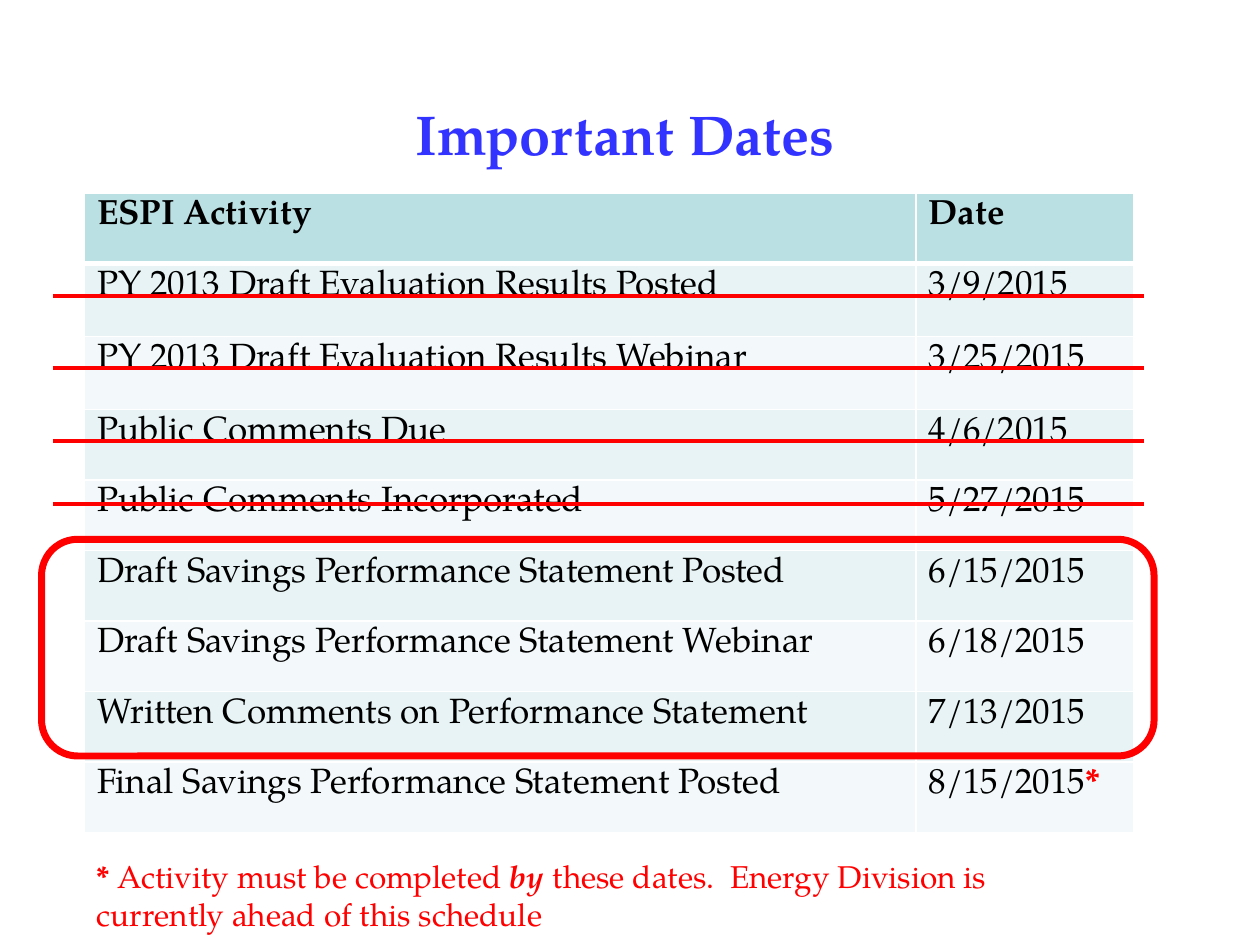
import pptx
import pptx.dml.color
import pptx.enum.shapes
import pptx.enum.text
import pptx.oxml
import pptx.oxml.ns
import pptx.util
from pptx.util import Inches

FONT = "TeX Gyre Pagella"
RED = "FF0000"
BLUE = "3333FF"
BLACK = "000000"
HEADER_FILL = "BBE0E3"
BAND_FILLS = ("E7F3F4", "F3F9FA")

COLUMN_WIDTHS = (6.6, 1.73)
ROW_HEIGHTS = (0.56, 0.58, 0.58) + (0.56,) * 6
ACTIVITIES = (
    ("ESPI Activity", "Date"),
    ("PY 2013 Draft Evaluation Results Posted", "3/9/2015"),
    ("PY 2013 Draft Evaluation Results Webinar", "3/25/2015"),
    ("Public Comments Due", "4/6/2015"),
    ("Public Comments Incorporated", "5/27/2015"),
    ("Draft Savings Performance Statement Posted", "6/15/2015"),
    ("Draft Savings Performance Statement Webinar", "6/18/2015"),
    ("Written Comments on Performance Statement", "7/13/2015"),
    ("Final Savings Performance Statement Posted", "8/15/2015"),
)
STRIKE_HEIGHTS = (2.35, 2.92, 3.5, 4)


def color(value):
    return pptx.dml.color.RGBColor.from_string(value)


def add_run(paragraph, text, size, text_color, bold=False, italic=False):
    run = paragraph.add_run()
    run.text = text
    run.font.name = FONT
    run.font.size = pptx.util.Pt(size)
    run.font.bold = bold
    run.font.italic = italic
    run.font.color.rgb = color(text_color)


def add_text_box(slide, left, top, width, height):
    text_box = slide.shapes.add_textbox(Inches(left), Inches(top), Inches(width), Inches(height))
    text_box.text_frame.word_wrap = True
    text_box.text_frame.auto_size = pptx.enum.text.MSO_AUTO_SIZE.SHAPE_TO_FIT_TEXT
    return text_box.text_frame.paragraphs[0]


def add_title(slide, left, top, width, height):
    paragraph = add_text_box(slide, left, top, width, height)
    paragraph.alignment = pptx.enum.text.PP_ALIGN.CENTER
    add_run(paragraph, "Important Dates", 32, BLUE, bold=True)


def set_borders(cell, top, bottom):
    properties = cell._tc.get_or_add_tcPr()
    for side, width in (("L", 1), ("R", 1), ("T", top), ("B", bottom)):
        properties.append(pptx.oxml.parse_xml(
            f'<a:ln{side} {pptx.oxml.ns.nsdecls("a")} w="{pptx.util.Pt(width)}">'
            f'<a:solidFill><a:srgbClr val="FFFFFF"/></a:solidFill></a:ln{side}>'
        ))


def add_activity_table(slide, left, top, width, height):
    table = slide.shapes.add_table(
        len(ACTIVITIES), len(COLUMN_WIDTHS),
        Inches(left), Inches(top), Inches(width), Inches(height),
    ).table
    for column, column_width in zip(table.columns, COLUMN_WIDTHS):
        column.width = Inches(column_width)
    for row, row_height in zip(table.rows, ROW_HEIGHTS):
        row.height = Inches(row_height)
    for row_index, texts in enumerate(ACTIVITIES):
        header = row_index == 0
        for column_index, text in enumerate(texts):
            cell = table.cell(row_index, column_index)
            set_borders(cell, 3 if row_index == 1 else 1, 3 if header else 1)
            cell.fill.solid()
            cell.fill.fore_color.rgb = color(HEADER_FILL if header else BAND_FILLS[(row_index - 1) % 2])
            add_run(cell.text_frame.paragraphs[0], text, 20, BLACK, bold=header)
    last_cell = table.cell(len(ACTIVITIES) - 1, 1)
    add_run(last_cell.text_frame.paragraphs[0], "*", 20, RED, bold=True)


def add_footnote(slide, left, top, width, height):
    paragraph = add_text_box(slide, left, top, width, height)
    add_run(paragraph, "* ", 18, RED, bold=True)
    add_run(paragraph, "Activity must be completed ", 18, RED)
    add_run(paragraph, "by", 18, RED, bold=True, italic=True)
    add_run(paragraph, " these dates.  Energy Division is currently ahead of this schedule", 18, RED)


def add_highlight(slide, left, top, width, height):
    shape = slide.shapes.add_shape(
        pptx.enum.shapes.MSO_SHAPE.ROUNDED_RECTANGLE,
        Inches(left), Inches(top), Inches(width), Inches(height),
    )
    shape.shadow.inherit = False
    shape.fill.background()
    shape.line.color.rgb = color(RED)
    shape.line.width = pptx.util.Pt(4)


def add_strikes(slide, left, right):
    for height in STRIKE_HEIGHTS:
        connector = slide.shapes.add_connector(
            pptx.enum.shapes.MSO_CONNECTOR.STRAIGHT,
            Inches(left), Inches(height), Inches(right), Inches(height),
        )
        connector.line.color.rgb = color(RED)
        connector.line.width = pptx.util.Pt(2)
        connector._element.spPr.append(pptx.oxml.parse_xml(
            f'<a:effectLst {pptx.oxml.ns.nsdecls("a")}/>'
        ))


def main():
    presentation = pptx.Presentation()
    presentation.slide_width = Inches(10)
    presentation.slide_height = Inches(7.5)
    slide = presentation.slides.add_slide(presentation.slide_layouts[6])
    add_title(slide, 1, 0.74, 7.92, 0.64)
    add_activity_table(slide, 0.67, 1.53, sum(COLUMN_WIDTHS), sum(ROW_HEIGHTS))
    add_footnote(slide, 0.67, 6.75, 7.92, 0.71)
    add_highlight(slide, 0.33, 4.28, 8.83, 1.72)
    add_strikes(slide, 0.42, 9.08)
    presentation.save("out.pptx")


if __name__ == "__main__":
    main()
